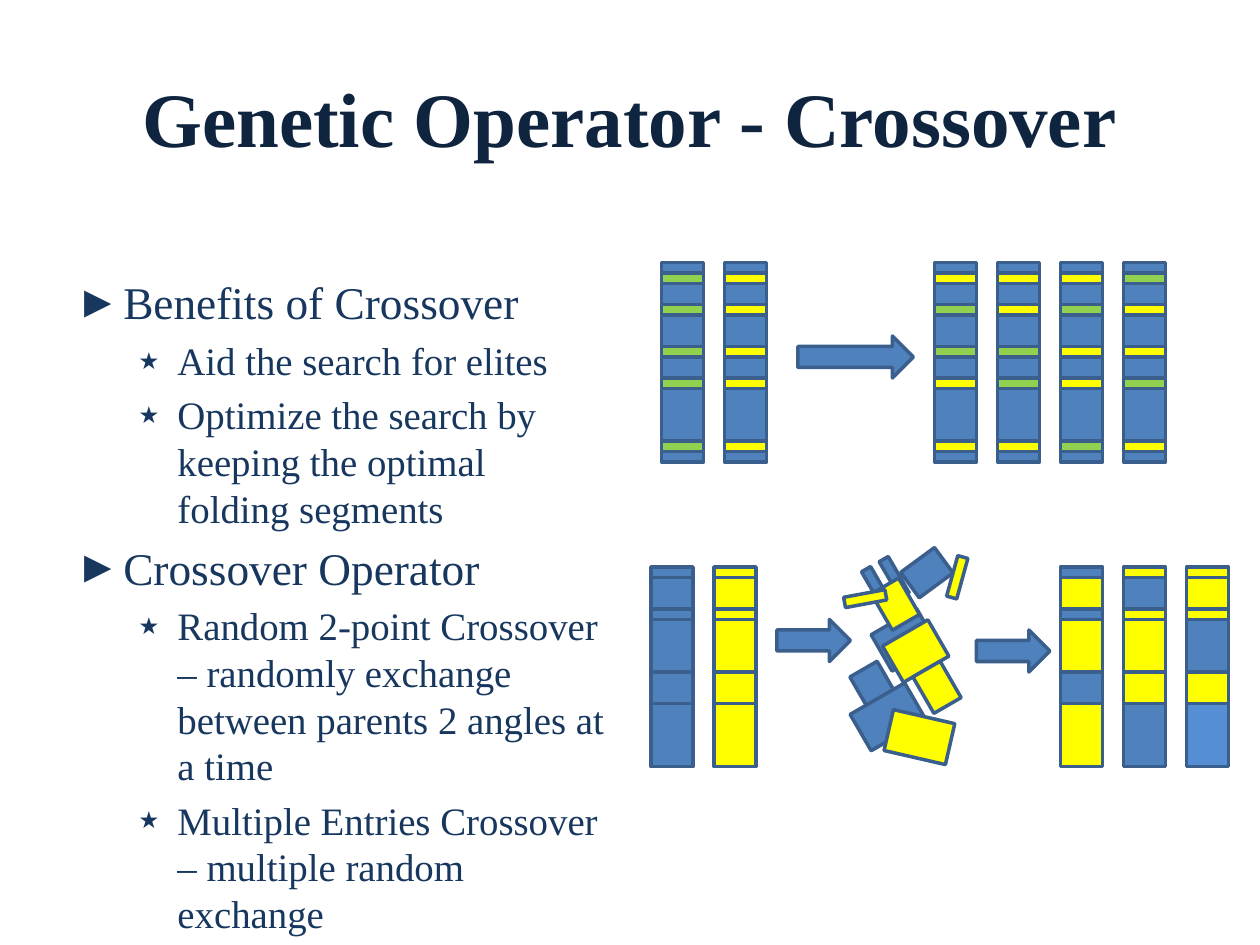
"""Build a slide on the genetic crossover operator."""
import pptx
import pptx.dml.color
import pptx.enum.shapes
import pptx.enum.text
import pptx.oxml
import pptx.oxml.ns
import pptx.util

Inches = pptx.util.Inches
Pt = pptx.util.Pt
SHAPE = pptx.enum.shapes.MSO_SHAPE
ALIGN = pptx.enum.text.PP_ALIGN
ANCHOR = pptx.enum.text.MSO_ANCHOR

UNIT = 1 / 12
WIDE = 4
BLUE, GREEN, GOLD, LIGHT = "4F81BD", "92D050", "FFFF00", "558ED5"
EDGE, NAVY, DARK = "3A5F8C", "17375E", "0F243E"
TINTS = {"B": BLUE, "G": GREEN, "Y": GOLD, "L": LIGHT}

BANDS = (1, 4, 8, 11, 17)
PARTS = (1, 3, 1, 5, 3, 6)
TOP_ROW = {63: "GGGGG", 69: "YYYYY", 89: "YGGYY",
           95: "YYGGY", 101: "YGYYG", 107: "GYYGY"}
LOW_ROW = {62: "BBBBBB", 68: "YYYYYY", 101: "BYBYBY",
           107: "YBYYYB", 113: "YYYBYL"}
LOOSE = {
    "B": ((6.93, 4.54, 60), (7.19, 4.42, 323.7), (6.79, 4.62, 60),
          (7.01, 4.87, 60), (6.77, 5.33, 60), (6.88, 5.44, 60)),
    "Y": ((7.43, 4.54, 105.4), (6.94, 4.67, 60), (6.7, 4.71, 349.5),
          (7.1, 4.96, 60), (7.27, 5.33, 60), (7.13, 5.6, 102.9)),
}
ARROWS = ((76, 32, 11), (74, 59, 7), (93, 60, 7))

LEVELS = (
    dict(size=25.9, mark="►", left=0.38, hang=0.38),
    dict(size=22.2, mark="٭", left=0.81, hang=0.31),
)
POINTS = (
    (0, "Benefits of Crossover"),
    (1, "Aid the search for elites"),
    (1, "Optimize the search by keeping the optimal folding segments"),
    (0, "Crossover Operator"),
    (1, "Random 2-point Crossover – randomly exchange between parents "
        "2 angles at a time"),
    (1, "Multiple Entries Crossover – multiple random exchange"),
)


def color(code):
    """Turn a hex string into a colour."""
    return pptx.dml.color.RGBColor.from_string(code)


def frame(slide, left, top, width, height, anchor=ANCHOR.TOP):
    """Add a wrapping text box and return its text frame."""
    box = slide.shapes.add_textbox(
        Inches(left), Inches(top), Inches(width), Inches(height))
    box.text_frame.word_wrap = True
    box.text_frame.vertical_anchor = anchor
    return box.text_frame


def write(para, text, size, code=NAVY, bold=False, align=ALIGN.LEFT,
          mark=None, left=0, hang=0, before=0):
    """Fill a paragraph with text in the given format."""
    para.text = text
    para.alignment = align
    para.space_before = Pt(before)
    if mark:
        props = para._p.get_or_add_pPr()
        props.set("marL", str(Inches(left)))
        props.set("indent", str(-Inches(hang)))
        space = pptx.oxml.ns.nsdecls("a")
        for tag in ('buFont typeface="Arial"', f'buChar char="{mark}"'):
            props.append(pptx.oxml.parse_xml(f"<a:{tag} {space}/>"))
    font = para.runs[0].font
    font.name = "Times New Roman"
    font.size = Pt(size)
    font.bold = bold
    font.color.rgb = color(code)


def block(slide, left, top, width, height, fill=BLUE, turn=0,
          kind=SHAPE.RECTANGLE):
    """Add an outlined preset shape."""
    shape = slide.shapes.add_shape(
        kind, Inches(left), Inches(top), Inches(width), Inches(height))
    shape.shadow.inherit = False
    shape.fill.solid()
    shape.fill.fore_color.rgb = color(fill)
    shape.line.color.rgb = color(EDGE)
    shape.line.width = Pt(2)
    shape.rotation = turn


def cell(slide, left, top, width, height, **style):
    """Add a shape placed in grid units."""
    block(slide, left * UNIT, top * UNIT, width * UNIT, height * UNIT, **style)


def banded(slide, left, tints):
    """Draw a blue strand crossed by thin bands."""
    cell(slide, left, 25, WIDE, sum(PARTS))
    for band, tint in zip(BANDS, tints):
        cell(slide, left, 25 + band, WIDE, 1, fill=TINTS[tint])


def stacked(slide, left, tints):
    """Draw a strand as a stack of segments."""
    top = 54
    for tall, tint in zip(PARTS, tints):
        cell(slide, left, top, WIDE, tall, fill=TINTS[tint])
        top += tall


def scatter(slide):
    """Draw the loose segments of both parents."""
    for tint, places in LOOSE.items():
        for tall, (left, top, turn) in zip(PARTS, places):
            block(slide, left, top, WIDE * UNIT, tall * UNIT,
                  fill=TINTS[tint], turn=turn)


def main():
    """Build and save the slide."""
    deck = pptx.Presentation()
    deck.slide_width, deck.slide_height = Inches(10), Inches(7.5)
    slide = deck.slides.add_slide(deck.slide_layouts[6])

    title = frame(slide, 0.5, 0.3, 9, 1.25, ANCHOR.MIDDLE)
    write(title.paragraphs[0], "Genetic Operator - Crossover", 44,
          code=DARK, bold=True, align=ALIGN.CENTER)

    body = frame(slide, 0.5, 2.13, 4.42, 4.95)
    for index, (level, text) in enumerate(POINTS):
        para = body.add_paragraph() if index else body.paragraphs[0]
        para.level = level
        style = LEVELS[level]
        before = round(style["size"] * 0.2, 1) if index else 0
        write(para, text, before=before, **style)

    for left, tints in TOP_ROW.items():
        banded(slide, left, tints)
    for left, tints in LOW_ROW.items():
        stacked(slide, left, tints)
    scatter(slide)
    for left, top, width in ARROWS:
        cell(slide, left, top, width, 4, kind=SHAPE.RIGHT_ARROW)

    deck.save("out.pptx")


if __name__ == "__main__":
    main()
